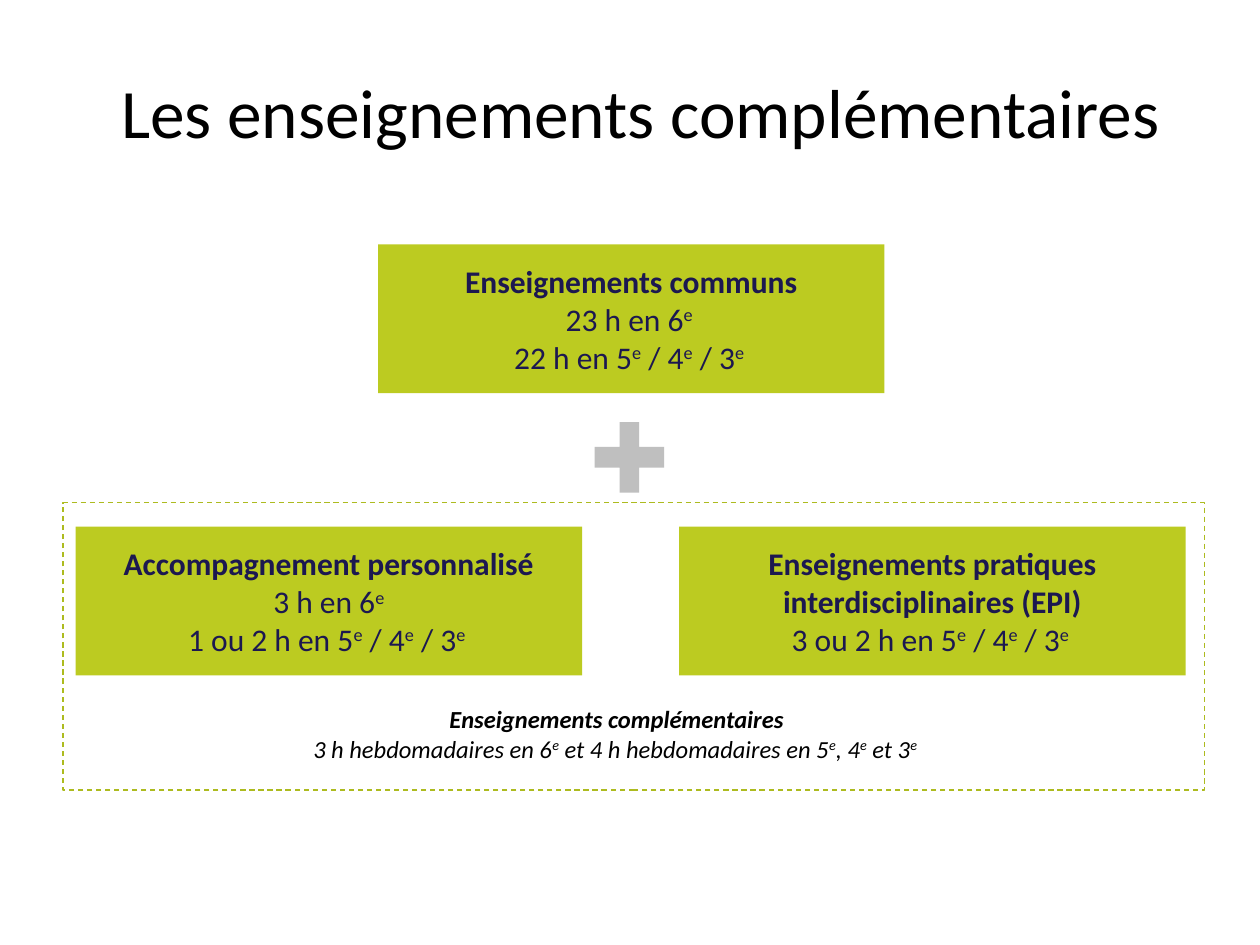
import pptx
import pptx.util
import pptx.dml.color
import pptx.enum.dml
import pptx.enum.shapes
import pptx.enum.text
from dataclasses import dataclass

Inches = pptx.util.Inches
Kind = pptx.enum.shapes.MSO_SHAPE
Anchor = pptx.enum.text.MSO_ANCHOR


@dataclass(frozen=True)
class Theme:
    font: str = "Calibri"
    black: str = "000000"
    navy: str = "1C1850"
    lime: str = "BCCB21"
    olive: str = "ADBB1F"
    grey: str = "BFBFBF"
    title: float = 39.6
    body: float = 18
    note: float = 14


def color(code):
    return pptx.dml.color.RGBColor.from_string(code)


def write(par, text, *, font, size, ink, bold=False, italic=False):
    """Add text to a paragraph; parts between carets are raised."""
    par.alignment = pptx.enum.text.PP_ALIGN.CENTER
    for i, part in enumerate(text.split("^")):
        if not part:
            continue
        run = par.add_run()
        run.text = part
        run.font.name = font
        run.font.size = pptx.util.Pt(size)
        run.font.color.rgb = color(ink)
        run.font.bold = bold
        run.font.italic = italic
        if i % 2:
            run._r.get_or_add_rPr().set("baseline", "30000")


class Deck:
    def __init__(self, theme):
        self.theme = theme
        self.file = pptx.Presentation()
        self.file.slide_width = Inches(10)
        self.file.slide_height = Inches(7.5)
        self.slide = self.file.slides.add_slide(self.file.slide_layouts[6])

    def lines(self, frame, rows, **style):
        """Write a bold first line, then plain ones."""
        frame.word_wrap = True
        for i, row in enumerate(rows):
            par = frame.add_paragraph() if i else frame.paragraphs[0]
            write(par, row, font=self.theme.font, bold=i == 0, **style)

    def text(self, x, y, w, h):
        box = self.slide.shapes.add_textbox(*map(Inches, (x, y, w, h)))
        box.text_frame.word_wrap = True
        return box.text_frame

    def shape(self, kind, x, y, w, h, fill=None):
        item = self.slide.shapes.add_shape(kind, *map(Inches, (x, y, w, h)))
        item.shadow.inherit = False
        item.line.fill.background()
        if fill:
            item.fill.solid()
            item.fill.fore_color.rgb = color(fill)
        else:
            item.fill.background()
        return item

    def title(self, text):
        frame = self.text(0.59, 0.36, 8.99, 1.34)
        frame.vertical_anchor = Anchor.MIDDLE
        par = frame.paragraphs[0]
        write(par, text, font=self.theme.font, size=self.theme.title,
              ink=self.theme.black)
        par.add_line_break()

    def card(self, x, y, rows):
        item = self.shape(Kind.RECTANGLE, x, y, 4.02, 1.18, self.theme.lime)
        item.text_frame.vertical_anchor = Anchor.MIDDLE
        self.lines(item.text_frame, rows, size=self.theme.body,
                   ink=self.theme.navy)

    def plus(self, x, y, w, h):
        item = self.shape(Kind.CROSS, x, y, w, h, self.theme.grey)
        item.adjustments[0] = 0.36

    def note(self, rows):
        self.lines(self.text(0.9, 5.54, 7.99, 0.57), rows, italic=True,
                   size=self.theme.note, ink=self.theme.black)

    def frame(self, x, y, w, h):
        line = self.shape(Kind.RECTANGLE, x, y, w, h).line
        line.color.rgb = color(self.theme.olive)
        line.width = pptx.util.Pt(0.75)
        line.dash_style = pptx.enum.dml.MSO_LINE.DASH


def main():
    deck = Deck(Theme())
    deck.title("Les enseignements complémentaires")

    # Hours by subject, with the levels they share
    levels = "5^e^ / 4^e^ / 3^e ^"
    deck.card(3, 1.94, ["Enseignements communs", "23 h en 6^e ^",
                        "22 h en " + levels])
    deck.card(5.39, 4.18, ["Enseignements pratiques interdisciplinaires (EPI)",
                           "3 ou 2 h en " + levels])
    deck.card(0.6, 4.18, ["Accompagnement personnalisé", "3 h en 6^e^",
                          "1 ou 2 h en " + levels])
    deck.plus(4.72, 3.35, 0.55, 0.56)

    # Total of the lower group and its dashed border
    deck.note(["Enseignements complémentaires",
               "3 h hebdomadaires en 6^e^ et 4 h hebdomadaires en "
               "5^e^, 4^e^ et 3^e ^"])
    deck.frame(0.5, 3.99, 9.06, 2.28)

    deck.file.save("out.pptx")


if __name__ == "__main__":
    main()
